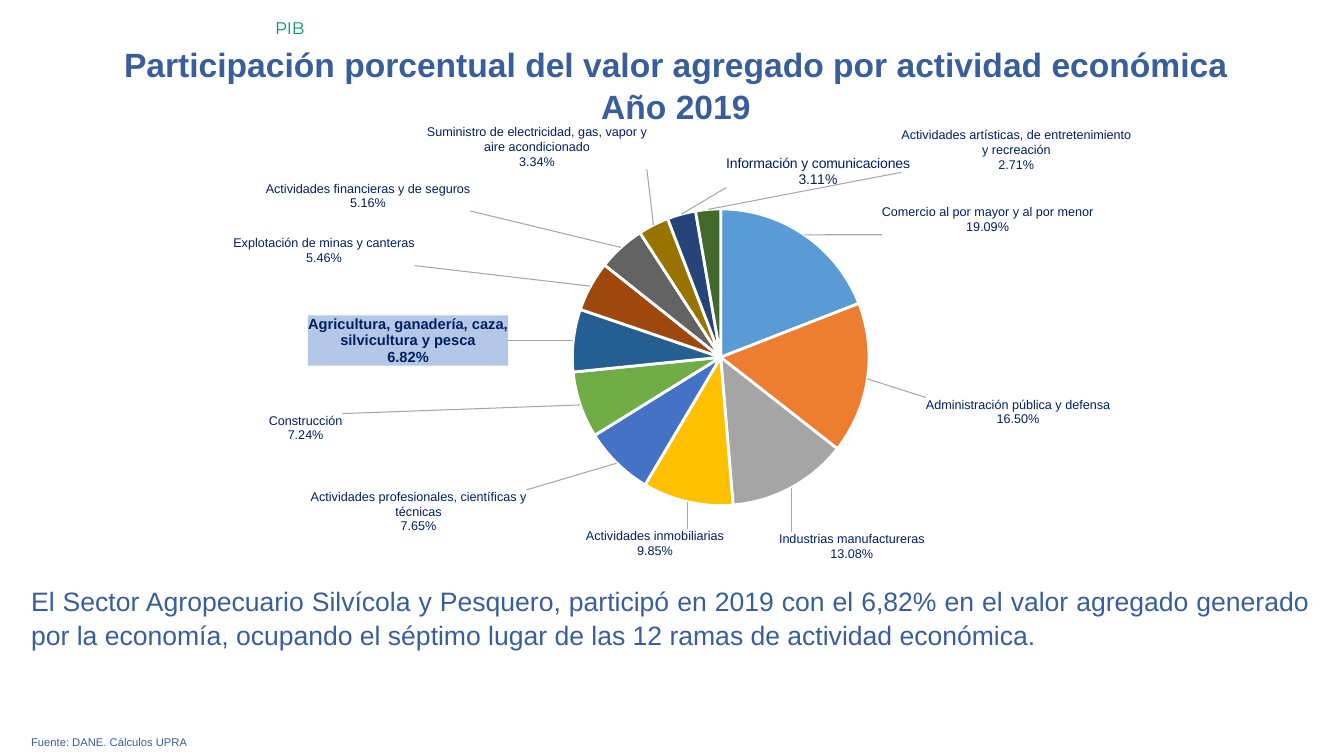
from dataclasses import dataclass
from math import cos, hypot, pi, sin

from lxml import etree
from pptx import Presentation
from pptx.chart.data import CategoryChartData
from pptx.dml.color import RGBColor
from pptx.enum.chart import XL_CHART_TYPE, XL_LABEL_POSITION
from pptx.enum.text import MSO_ANCHOR, PP_ALIGN
from pptx.util import Pt

PIE = XL_CHART_TYPE.PIE
BEST = XL_LABEL_POSITION.BEST_FIT
LEFT, MID, FULL = PP_ALIGN.LEFT, PP_ALIGN.CENTER, PP_ALIGN.JUSTIFY
TOP, CENTER = MSO_ANCHOR.TOP, MSO_ANCHOR.MIDDLE
NS = ('xmlns:c="http://schemas.openxmlformats.org/drawingml/2006/chart" '
      'xmlns:a="http://schemas.openxmlformats.org/drawingml/2006/main"')
C15 = "http://schemas.microsoft.com/office/drawing/2012/chart"


@dataclass
class Theme:
    font: str = "Arial"
    brand: str = "Montserrat"
    blue: str = "395F9B"
    green: str = "009267"
    navy: str = "002060"
    white: str = "FFFFFF"
    mark: str = "B4C7E7"
    line: str = "A6A6A6"
    title: float = 24
    body: float = 19
    tag: float = 12
    chart: float = 10
    label: float = 9
    note: float = 8
    pitch: float = 1.15
    space: float = 1.05


@dataclass
class Slice:
    name: str
    value: float
    color: str
    left: float
    top: float
    width: float
    lines: int = 2
    size: float = 9
    mark: bool = False


SLICES = [
    Slice("Comercio al por mayor y al por menor", 19.09, "5B9BD5", 630, 147, 150.7),
    Slice("Administración pública y defensa", 16.5, "ED7D31", 661.5, 284, 132),
    Slice("Industrias manufactureras", 13.08, "A5A5A5", 556.5, 380, 104.3),
    Slice("Actividades inmobiliarias", 9.85, "FFC000", 418.5, 378, 98.6),
    Slice("Actividades profesionales, científicas y técnicas", 7.65, "4472C4",
          220, 350, 156, 3),
    Slice("Construcción", 7.24, "70AD47", 191.5, 295.5, 53),
    Slice("Agricultura, ganadería, caza, silvicultura y pesca", 6.82, "255E91",
          219, 225, 144, 3, 10.5, True),
    Slice("Explotación de minas y canteras", 5.46, "9E480E", 167, 169, 129.3),
    Slice("Actividades financieras y de seguros", 5.16, "636363", 189.5, 130, 146.4),
    Slice("Suministro de electricidad, gas, vapor y aire acondicionado", 3.34, "997300",
          303, 90, 159, 3),
    Slice("Información y comunicaciones", 3.11, "264478", 518.5, 111, 131.4, 2, 10),
    Slice("Actividades artísticas, de entretenimiento y recreación", 2.71, "43682B",
          643, 92, 166, 3),
]


def put(obj, **vals):
    for key, val in vals.items():
        setattr(obj, key, val)


def node(text):
    return etree.fromstring(text)


class Deck:
    def __init__(self, theme):
        self.theme = theme
        self.file = Presentation()
        put(self.file, slide_width=Pt(960), slide_height=Pt(540))
        self.slide = self.file.slides.add_slide(self.file.slide_layouts[5])

    def fill(self, shape, box, lines, size, color, align, font=None, bold=False,
             anchor=TOP, space=1.0):
        put(shape, **dict(zip(("left", "top", "width", "height"), map(Pt, box))))
        frame = shape.text_frame
        put(frame, text="\n".join(lines), word_wrap=True, vertical_anchor=anchor)
        for para in frame.paragraphs:
            put(para, alignment=align, line_spacing=space)
            put(para.runs[0].font, size=Pt(size), name=font or self.theme.font, bold=bold)
            para.runs[0].font.color.rgb = RGBColor.from_string(color)

    def title(self, box, lines):
        t = self.theme
        self.fill(self.slide.shapes.title, box, lines, t.title, t.blue, MID,
                  bold=True, anchor=CENTER, space=t.space)

    def text(self, box, line, size, color, align, **kind):
        shape = self.slide.shapes.add_textbox(*map(Pt, box))
        self.fill(shape, box, [line], size, color, align, **kind)

    def shift(self, part, turn, box, plot):
        wide, high = box[2:]
        x, y, w, h = plot
        reach = min(w * wide, h * high) / 2 + 4.25
        across, up = sin(turn), cos(turn)
        left = box[0] + (x + w / 2) * wide + reach * across
        top = box[1] + (y + h / 2) * high - reach * up
        if across < 0:
            left -= part.width
        if up > 0:
            top -= part.lines * part.size * self.theme.pitch
        if abs(across) < sin(pi / 36):
            left += part.width / 2 * (1 if across < 0 else -1)
        if abs(up) < sin(pi / 36):
            tall = part.lines * part.size * self.theme.pitch
            top += tall / 2 * (1 if up > 0 else -1)
        return (part.left - left) / wide, (part.top - top) / high

    def label(self, spot, part, move, box):
        t = self.theme
        fill = f'<a:solidFill><a:srgbClr val="{t.mark}"/></a:solidFill>' if part.mark else "<a:noFill/>"
        size = ""
        if part.lines > 2:
            tall = part.lines * part.size * t.pitch / box[3]
            size = (f'<c:extLst><c:ext uri="{{CE6537A1-D6FC-4f65-9D91-7224C49458BB}}" '
                    f'xmlns:c15="{C15}"><c15:layout><c:manualLayout>'
                    f'<c:w val="{part.width / box[2]:.4f}"/><c:h val="{tall:.4f}"/>'
                    '</c:manualLayout></c15:layout></c:ext></c:extLst>')
        return node(
            f'<c:dLbl {NS}><c:idx val="{spot}"/><c:layout><c:manualLayout>'
            f'<c:x val="{move[0]:.4f}"/><c:y val="{move[1]:.4f}"/></c:manualLayout></c:layout>'
            f'<c:numFmt formatCode="0.00%" sourceLinked="0"/>'
            f'<c:spPr>{fill}<a:ln><a:noFill/></a:ln></c:spPr>'
            f'<c:txPr><a:bodyPr wrap="square" lIns="0" tIns="0" rIns="0" bIns="0" anchor="ctr"/>'
            f'<a:p><a:pPr><a:defRPr sz="{int(part.size * 100)}" b="{int(part.mark)}">'
            f'<a:solidFill><a:srgbClr val="{t.navy}"/></a:solidFill>'
            f'<a:latin typeface="{t.font}"/></a:defRPr></a:pPr><a:endParaRPr lang="es-CO"/></a:p></c:txPr>'
            '<c:dLblPos val="bestFit"/><c:showLegendKey val="0"/><c:showVal val="0"/>'
            '<c:showCatName val="1"/><c:showSerName val="0"/><c:showPercent val="1"/>'
            f'<c:showBubbleSize val="0"/><c:separator>\n</c:separator>{size}</c:dLbl>')

    def pie(self, box, plot, parts):
        t = self.theme
        data = CategoryChartData()
        data.categories = [part.name for part in parts]
        data.add_series("Series 1", [part.value for part in parts])
        chart = self.slide.shapes.add_chart(PIE, *map(Pt, box), data).chart
        put(chart, has_title=False, has_legend=False)
        put(chart.font, size=Pt(t.chart), name=t.font)
        chart.font.color.rgb = RGBColor.from_string(t.navy)
        chart.plots[0].vary_by_categories = True
        area = chart.plots[0]._element.getparent()
        for old in area.findall("{*}layout"):
            area.remove(old)
        sides = "".join(f'<c:{key} val="{val}"/>' for key, val in zip("xywh", plot))
        area.insert(0, node(
            f'<c:layout {NS}><c:manualLayout><c:layoutTarget val="inner"/>'
            f'<c:xMode val="edge"/><c:yMode val="edge"/>{sides}</c:manualLayout></c:layout>'))

        row = chart.plots[0].series[0]
        tags = row.data_labels
        put(tags, number_format="0.00%", number_format_is_linked=False, show_value=False,
            show_percentage=True, show_category_name=True, position=BEST)
        put(tags.font, size=Pt(t.label), name=t.font)
        tags.font.color.rgb = RGBColor.from_string(t.navy)
        root = tags._element
        lead = root.find("{*}showLeaderLines")
        if lead is None:
            lead = node(f'<c:showLeaderLines {NS} val="1"/>')
            root.append(lead)
        lead.set("val", "1")
        lead.addprevious(node(f"<c:separator {NS}>\n</c:separator>"))
        lead.addnext(node(
            f'<c:leaderLines {NS}><c:spPr><a:ln w="9525"><a:solidFill>'
            f'<a:srgbClr val="{t.line}"/></a:solidFill></a:ln></c:spPr></c:leaderLines>'))

        total, done = sum(part.value for part in parts), 0
        for spot, part in enumerate(parts):
            style = row.points[spot].format
            style.fill.solid()
            style.fill.fore_color.rgb = RGBColor.from_string(part.color)
            style.line.width = Pt(2)
            style.line.color.rgb = RGBColor.from_string(t.white)
            turn = 2 * pi * (done + part.value / 2) / total
            done += part.value
            move = self.shift(part, turn, box, plot)
            root.insert(spot, self.label(spot, part, move, box))


def main():
    t = Theme()
    deck = Deck(t)
    deck.title((32.4, 27.4, 900.7, 65.5),
               ["Participación porcentual del valor agregado por actividad económica", "Año 2019"])
    deck.text((15.1, 522, 929.5, 17.3), "Fuente: DANE. Cálculos UPRA", t.note, t.blue, FULL)
    deck.text((15.1, 413.3, 927.4, 53.3),
              "El Sector Agropecuario Silvícola y Pesquero, participó en 2019 con el 6,82% en el valor "
              "agregado generado por la economía, ocupando el séptimo lugar de las 12 ramas de "
              "actividad económica.", t.body, t.blue, FULL, space=t.space)
    deck.text((189.4, 9.4, 770.4, 21.6), "PIB", t.tag, t.green, LEFT, font=t.brand)
    deck.pie((74.2, 87.1, 825.1, 355), (0.194, 0.175, 0.68, 0.597), SLICES)
    deck.file.save("out.pptx")


if __name__ == "__main__":
    main()
